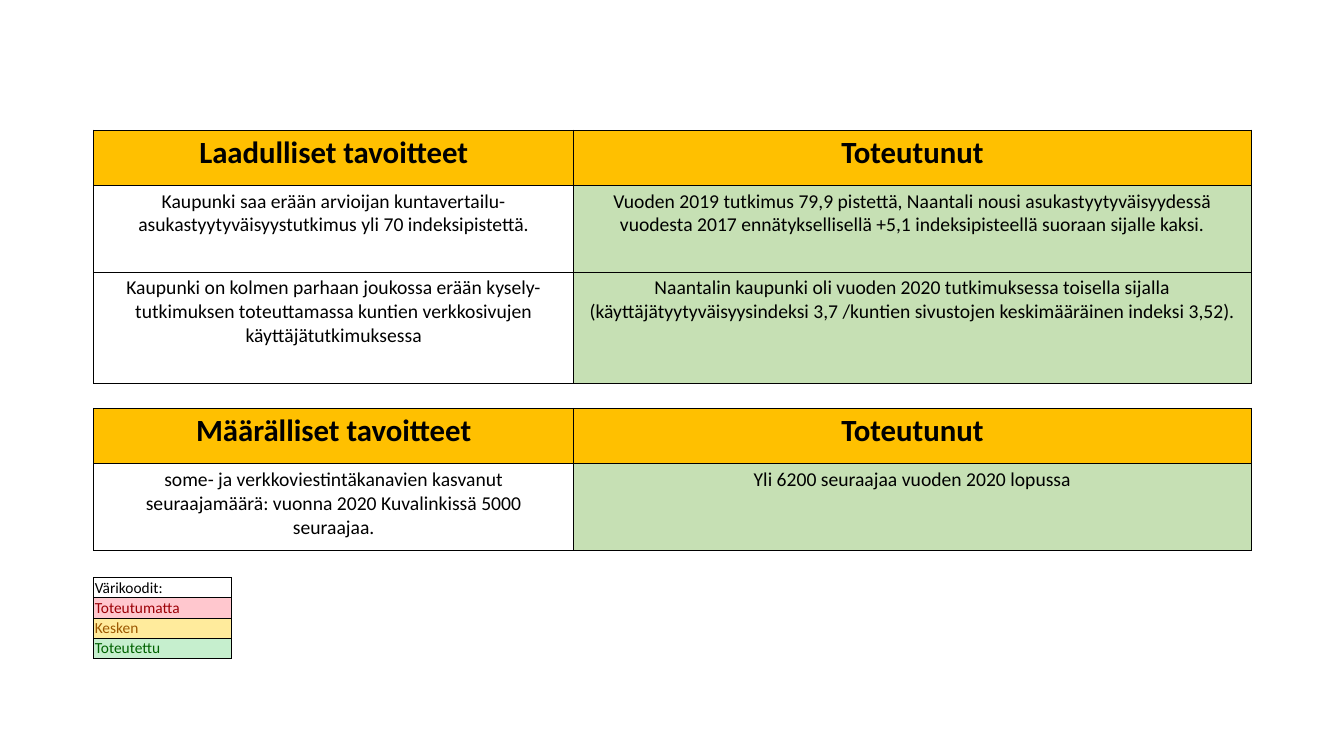
from dataclasses import dataclass

from lxml.etree import SubElement
from pptx import Presentation
from pptx.dml.color import RGBColor
from pptx.enum.text import PP_ALIGN
from pptx.oxml.ns import qn
from pptx.util import Inches, Pt

GOALS = [
    ("header", "Laadulliset tavoitteet", "Toteutunut"),
    ("goal",
     "Kaupunki saa erään arvioijan kuntavertailu-asukastyytyväisyystutkimus yli 70 indeksipistettä.",
     "Vuoden 2019 tutkimus 79,9 pistettä, Naantali nousi asukastyytyväisyydessä "
     "vuodesta 2017 ennätyksellisellä +5,1 indeksipisteellä suoraan sijalle kaksi."),
    ("goal",
     "Kaupunki on kolmen parhaan joukossa erään kysely-tutkimuksen toteuttamassa "
     "kuntien verkkosivujen käyttäjätutkimuksessa",
     "Naantalin kaupunki oli vuoden 2020 tutkimuksessa toisella sijalla "
     "(käyttäjätyytyväisyysindeksi 3,7 /kuntien sivustojen keskimääräinen indeksi 3,52)."),
    ("gap", "", ""),
    ("header", "Määrälliset tavoitteet", "Toteutunut"),
    ("goal",
     "some- ja verkkoviestintäkanavien kasvanut seuraajamäärä: "
     "vuonna 2020 Kuvalinkissä 5000 seuraajaa.",
     "Yli 6200 seuraajaa vuoden 2020 lopussa"),
]
GOAL_ROWS = [0.55, 0.86, 1.1, 0.25, 0.55, 0.86]
GOAL_COLUMNS = [2.38] * 2 + [1.68] * 4
RESULT_COLUMN = 2

# Label, text colour, fill
COLOUR_CODES = [
    ("Värikoodit:", "000000", None),
    ("Toteutumatta", "9C0006", "FFC7CE"),
    ("Kesken", "9C5700", "FFEB9C"),
    ("Toteutettu", "006100", "C6EFCE"),
]


@dataclass(frozen=True)
class Theme:
    font: str = "Calibri"
    ink: str = "000000"
    header: str = "FFC000"
    done: str = "C6E0B4"
    header_size: float = 22
    goal_size: float = 14
    code_size: float = 11
    gap_size: float = 8
    border: float = 0.5


THEME = Theme()


def add_plain_table(slide, left, top, columns, rows):
    frame = slide.shapes.add_table(
        len(rows), len(columns), Inches(left), Inches(top),
        Inches(sum(columns)), Inches(sum(rows)))
    table = frame.table
    table.first_row = table.horz_banding = False
    for column, width in zip(table.columns, columns):
        column.width = Inches(width)
    for row, height in zip(table.rows, rows):
        row.height = Inches(height)
    return table


def style_cell(cell, fill=None, sides="LRTB"):
    """Draw borders on the named sides only, then set or clear the fill."""
    properties = cell._tc.get_or_add_tcPr()
    for side in "LRTB":
        line = SubElement(properties, qn(f"a:ln{side}"), w=str(Pt(THEME.border)))
        if side in sides:
            paint = SubElement(line, qn("a:solidFill"))
            SubElement(paint, qn("a:srgbClr"), val=THEME.ink)
        else:
            SubElement(line, qn("a:noFill"))
    if fill:
        cell.fill.solid()
        cell.fill.fore_color.rgb = RGBColor.from_string(fill)
    else:
        cell.fill.background()


def set_margins(cell, sides, top, bottom):
    cell.margin_left = cell.margin_right = Inches(sides)
    cell.margin_top, cell.margin_bottom = Inches(top), Inches(bottom)


def write(cell, text, size, colour=THEME.ink, bold=False, align=PP_ALIGN.LEFT):
    cell.text = text
    paragraph = cell.text_frame.paragraphs[0]
    paragraph.alignment = align
    font = paragraph.font
    font.name, font.size, font.bold = THEME.font, Pt(size), bold
    font.color.rgb = RGBColor.from_string(colour)


def fill_gap_row(cells):
    for cell in cells:
        style_cell(cell, sides="TB")
        set_margins(cell, 0, 0, 0)
        paragraph = cell.text_frame.paragraphs[0]
        SubElement(paragraph._p, qn("a:endParaRPr"), sz=str(int(THEME.gap_size * 100)))


def fill_goal_row(cells, kind, goal, result):
    is_header = kind == "header"
    size = THEME.header_size if is_header else THEME.goal_size
    parts = [
        (cells[:RESULT_COLUMN], goal, THEME.header if is_header else None),
        (cells[RESULT_COLUMN:], result, THEME.header if is_header else THEME.done),
    ]
    for span, text, fill in parts:
        span[0].merge(span[-1])
        style_cell(span[0], fill)
        for cell in span[1:]:
            style_cell(cell, fill, "TBR" if cell is span[-1] else "TB")
        set_margins(span[0], 0.09, 0.04, 0.04)
        write(span[0], text, size, bold=is_header, align=PP_ALIGN.CENTER)


def add_goals(slide):
    table = add_plain_table(slide, 0.93, 1.29, GOAL_COLUMNS, GOAL_ROWS)
    for row, (kind, goal, result) in zip(table.rows, GOALS):
        cells = list(row.cells)
        if kind == "gap":
            fill_gap_row(cells)
        else:
            fill_goal_row(cells, kind, goal, result)


def add_colour_codes(slide):
    table = add_plain_table(slide, 0.93, 5.73, [1.36], [0.2] * len(COLOUR_CODES))
    for row, (label, colour, fill) in zip(table.rows, COLOUR_CODES):
        cell = row.cells[0]
        style_cell(cell, fill)
        set_margins(cell, 0.01, 0.01, 0)
        write(cell, label, THEME.code_size, colour)


def main():
    presentation = Presentation()
    presentation.slide_width, presentation.slide_height = Inches(13.33), Inches(7.5)
    slide = presentation.slides.add_slide(presentation.slide_layouts[6])
    add_goals(slide)
    add_colour_codes(slide)
    presentation.save("out.pptx")


if __name__ == "__main__":
    main()
